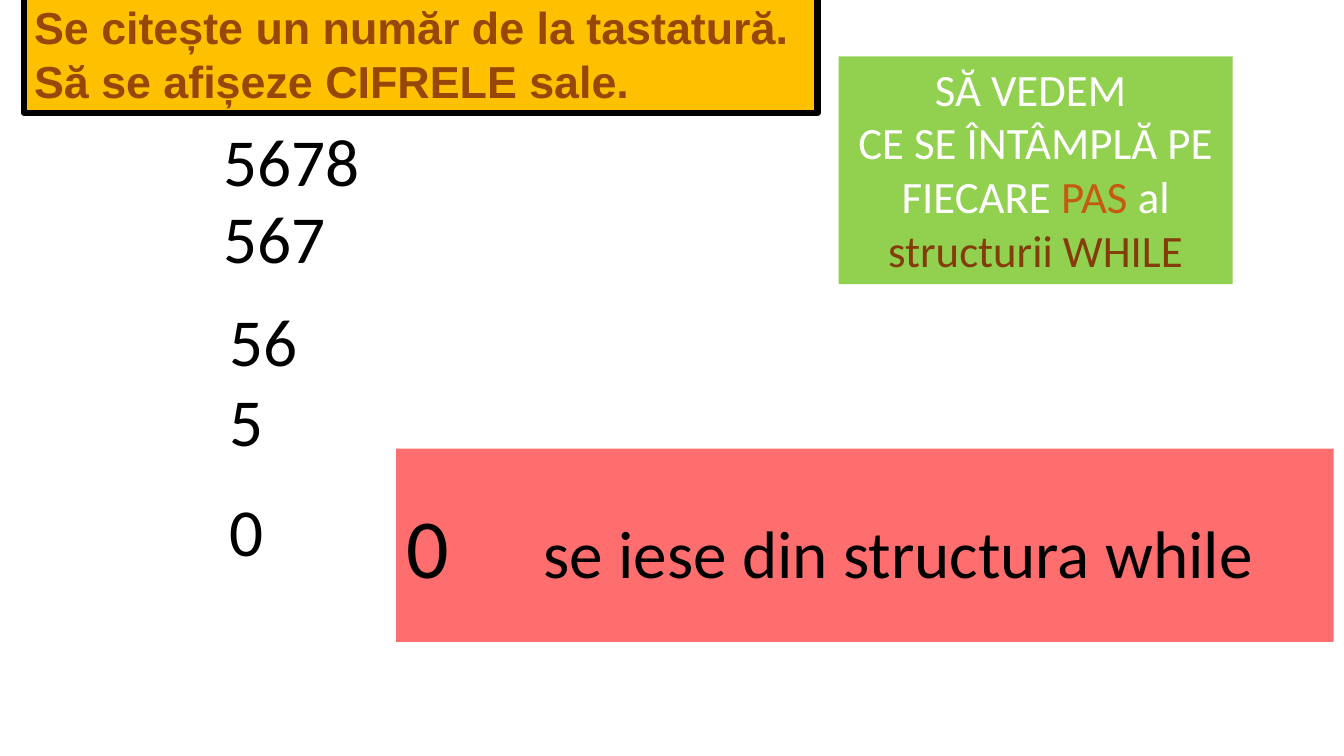
from lxml import etree
from pptx import Presentation
from pptx.dml.color import RGBColor
from pptx.enum.shapes import MSO_SHAPE
from pptx.enum.text import MSO_ANCHOR, PP_ALIGN
from pptx.oxml.ns import qn
from pptx.util import Pt

RECTANGLE = MSO_SHAPE.RECTANGLE
TOP, MIDDLE = MSO_ANCHOR.TOP, MSO_ANCHOR.MIDDLE
LEFT, CENTER = PP_ALIGN.LEFT, PP_ALIGN.CENTER

THEME = {
    "body_font": "Calibri", "title_font": "Arial",
    "text": "000000", "light": "FFFFFF", "brown": "974707",
    "orange": "C55A11", "dark_brown": "843C0B",
    "yellow": "FFC000", "green": "92D050", "red": "FF0000",
    "exit_opacity": 57,
    "label": 32, "number": 48, "result": 60,
}

# Each paragraph is a list of runs: (text, colour name, size name)
TITLE = [
    [("Se citește un număr de la tastatură.", "brown", "label")],
    [("Să se afișeze CIFRELE sale.", "brown", "label")],
]
STEP_NOTE = [
    [("SĂ VEDEM ", "light", "label")],
    [("CE SE ÎNTÂMPLĂ PE FIECARE ", "light", "label"), ("PAS", "orange", "label"),
     (" al ", "light", "label"), ("structurii WHILE", "dark_brown", "label")],
]
EXIT_NOTE = [
    [("0\t", "text", "result"), ("se iese din structura while", "text", "number")],
]
# Value of the number at each step, with its left and top
NUMBERS = [
    ("5678", 152.6, 81.4), ("567", 152.6, 136.8),
    ("56", 157, 210.2), ("5", 157, 267.1), ("0", 157, 346.3),
]
NUMBER_SIZE = (386.6, 65.5)
TITLE_BOX = (17.3, -4.3, 566.6, 85)
STEP_BOX = (599, 40.3, 281.5, 162.7)
EXIT_BOX = (283, 320.4, 669.6, 138.2)
EXIT_TOP_INSET = 32.9
EXIT_TAB = 98.2


def color(name):
    return RGBColor.from_string(THEME[name])


def write(shape, paragraphs, align=LEFT, anchor=TOP, font="body_font", bold=False):
    frame = shape.text_frame
    frame.word_wrap = True
    frame.vertical_anchor = anchor
    for index, runs in enumerate(paragraphs):
        paragraph = frame.paragraphs[0] if index == 0 else frame.add_paragraph()
        paragraph.alignment = align
        paragraph.font.name = THEME[font]
        paragraph.font.bold = bold
        for text, color_name, size_name in runs:
            run = paragraph.add_run()
            run.text = text
            run.font.size = Pt(THEME[size_name])
            run.font.color.rgb = color(color_name)


def add_panel(slide, box, fill):
    panel = slide.shapes.add_shape(RECTANGLE, *map(Pt, box))
    panel.shadow.inherit = False
    panel.fill.solid()
    panel.fill.fore_color.rgb = color(fill)
    panel.line.fill.background()
    return panel


def set_opacity(shape, percent):
    fill_color = shape.fill._xPr.find(qn("a:solidFill"))[0]
    etree.SubElement(fill_color, qn("a:alpha"), val=str(percent * 1000))


def add_tab_stop(paragraph, position):
    properties = paragraph._p.get_or_add_pPr()
    tabs = etree.Element(qn("a:tabLst"))
    etree.SubElement(tabs, qn("a:tab"), pos=str(Pt(position)), algn="l")
    defaults = properties.find(qn("a:defRPr"))
    defaults.addprevious(tabs)


def main():
    presentation = Presentation()
    presentation.slide_width, presentation.slide_height = Pt(960), Pt(540)
    slide = presentation.slides.add_slide(presentation.slide_layouts[6])

    for value, left, top in NUMBERS:
        number = slide.shapes.add_textbox(Pt(left), Pt(top), *map(Pt, NUMBER_SIZE))
        write(number, [[(value, "text", "number")]])

    exit_note = add_panel(slide, EXIT_BOX, "red")
    set_opacity(exit_note, THEME["exit_opacity"])
    write(exit_note, EXIT_NOTE)
    exit_note.text_frame.margin_top = Pt(EXIT_TOP_INSET)
    add_tab_stop(exit_note.text_frame.paragraphs[0], EXIT_TAB)

    write(add_panel(slide, STEP_BOX, "green"), STEP_NOTE, align=CENTER)

    title = add_panel(slide, TITLE_BOX, "yellow")
    title.line.color.rgb = color("text")
    title.line.width = Pt(4.5)
    write(title, TITLE, anchor=MIDDLE, font="title_font", bold=True)
    title.text_frame.word_wrap = False

    presentation.save("out.pptx")


if __name__ == "__main__":
    main()
